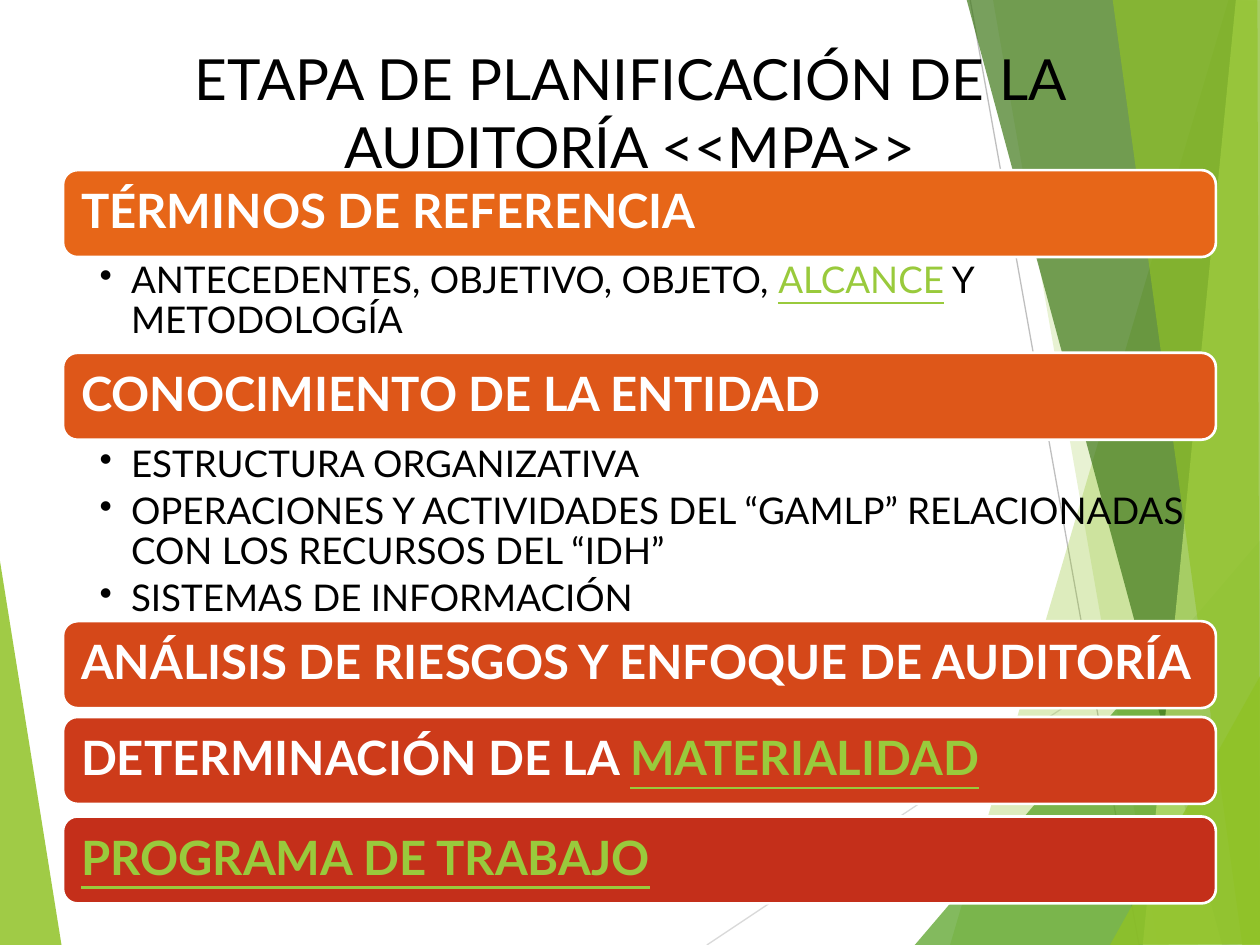
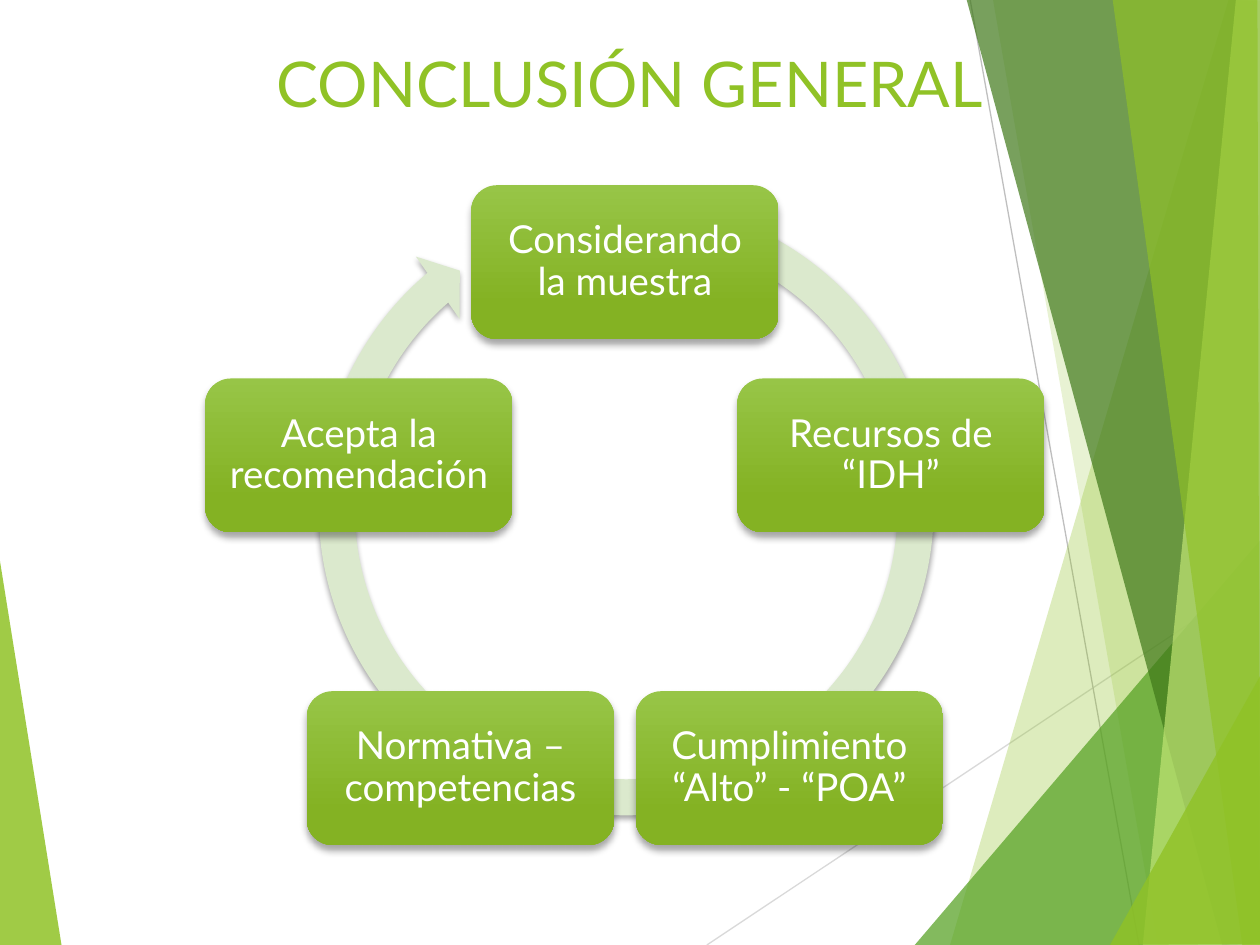
from dataclasses import dataclass
from math import cos, radians, sin

from lxml.etree import SubElement
from pptx import Presentation
from pptx.dml.color import RGBColor
from pptx.enum.shapes import MSO_CONNECTOR, MSO_SHAPE
from pptx.enum.text import MSO_ANCHOR, PP_ALIGN
from pptx.oxml.ns import qn
from pptx.util import Inches, Pt


@dataclass(frozen=True)
class Theme:
    font: str = "Lato"
    black: str = "000000"
    white: str = "FFFFFF"
    green: str = "90C226"
    forest: str = "54A021"
    dark_green: str = "3F7819"
    lime: str = "C0E474"
    link: str = "99CA3C"
    ring: str = "DBE9CD"
    node_top: str = "97C547"
    node_bottom: str = "84B223"
    light_gray: str = "D9D9D9"
    gray: str = "BFBFBF"
    bars: tuple = ("E76618", "DE5719", "D54819", "CD3B1A", "C42F1A")
    long_title_size: float = 32.4
    title_size: float = 36
    bar_size: float = 27
    bullet_size: float = 21
    node_size: float = 22


THEME = Theme()

LEFT_FACET = (THEME.green, 85, [(-0.01, 4.39), (0.49, 7.51), (-0.01, 7.5)])
RIGHT_FACETS = [
    (THEME.green, 30, [(9.75, 0), (7.54, 7.5), (10.02, 7.51), (10.01, 0.01)]),
    (THEME.green, 20, [(7.88, -0.01), (9.19, 7.5), (10.01, 7.5), (10.01, -0.01)]),
    (THEME.forest, 72, [(7.26, 7.5), (10, 4.29), (10.01, 7.5)]),
    (THEME.dark_green, 70, [(7.67, -0.01), (9.7, 7.5), (10.01, 7.49), (10.01, -0.01)]),
    (THEME.lime, 70, [(9.81, -0.01), (9.07, 7.5), (10.01, 7.5), (10, -0.01)]),
    (THEME.green, 65, [(8.83, -0.01), (9.86, 7.5), (10, 7.5), (9.98, -0.01)]),
    (THEME.green, 80, [(8.81, 7.5), (10.01, 5.35), (10.01, 7.49)]),
]
FACET_LINES = [
    (THEME.light_gray, (5.61, 7.5), (10.01, 4.57)),
    (THEME.gray, (7.7, 0), (9.04, 7.5)),
]

STAGES = [
    (1.35, [("TÉRMINOS DE REFERENCIA", False)]),
    (2.8, [("CONOCIMIENTO DE LA ENTIDAD", False)]),
    (4.93, [("ANÁLISIS DE RIESGOS Y ENFOQUE DE AUDITORÍA", False)]),
    (5.69, [("DETERMINACIÓN DE LA ", False), ("MATERIALIDAD", True)]),
    (6.48, [("PROGRAMA DE TRABAJO", True)]),
]
STAGE_DETAILS = [
    (2.04, 0.76, [
        [("ANTECEDENTES, OBJETIVO, OBJETO, ", False), ("ALCANCE", True),
         (" Y METODOLOGÍA", False)],
    ]),
    (3.5, 1.44, [
        [("ESTRUCTURA ORGANIZATIVA", False)],
        [("OPERACIONES Y ACTIVIDADES DEL “GAMLP” RELACIONADAS "
          "CON LOS RECURSOS DEL “IDH”", False)],
        [("SISTEMAS DE INFORMACIÓN", False)],
    ]),
]
CYCLE_STEPS = [
    "Considerando la muestra",
    "Recursos de “IDH”",
    "Cumplimiento “Alto” - “POA”",
    "Normativa – competencias",
    "Acepta la recomendación",
]


def rgb(color):
    return RGBColor.from_string(color)


def box(*lengths):
    return [Inches(length) for length in lengths]


def add_bullet(paragraph):
    properties = paragraph._p.get_or_add_pPr()
    properties.set("marL", str(Inches(0.25)))
    properties.set("indent", str(-Inches(0.25)))
    SubElement(properties, qn("a:buChar")).set("char", "•")


def write_text(shape, paragraphs, *, size, color, bold=False, align=PP_ALIGN.LEFT,
               anchor=MSO_ANCHOR.TOP, insets=(0.1, 0.05, 0.1, 0.05),
               line_spacing=None, space_after=0, bullets=False):
    frame = shape.text_frame
    frame.word_wrap = True
    frame.vertical_anchor = anchor
    (frame.margin_left, frame.margin_top,
     frame.margin_right, frame.margin_bottom) = box(*insets)
    for index, runs in enumerate(paragraphs):
        paragraph = frame.add_paragraph() if index else frame.paragraphs[0]
        paragraph.alignment = align
        paragraph.line_spacing = line_spacing
        paragraph.space_after = Pt(space_after)
        if bullets:
            add_bullet(paragraph)
        for text, is_link in runs:
            run = paragraph.add_run()
            run.text = text
            run.font.name = THEME.font
            run.font.size = Pt(size)
            run.font.bold = bold
            run.font.underline = is_link
            run.font.color.rgb = rgb(THEME.link if is_link else color)


def add_shadow(shape, blur, distance):
    effects = shape._element.spPr.find(qn("a:effectLst"))
    shadow = SubElement(effects, qn("a:outerShdw"), blurRad=str(Pt(blur)),
                        dist=str(Pt(distance)), dir="5400000", rotWithShape="0")
    color = SubElement(shadow, qn("a:srgbClr"), val=THEME.black)
    SubElement(color, qn("a:alpha"), val="35000")


def add_plain_shape(slide, kind, *lengths, fill=None):
    shape = slide.shapes.add_shape(kind, *box(*lengths))
    shape.shadow.inherit = False
    shape.line.fill.background()
    if fill:
        shape.fill.solid()
        shape.fill.fore_color.rgb = rgb(fill)
    return shape


def add_facet(slide, color, opacity, points):
    corners = [box(*point) for point in points]
    builder = slide.shapes.build_freeform(*corners[0])
    builder.add_line_segments(corners[1:], close=True)
    facet = builder.convert_to_shape()
    facet.shadow.inherit = False
    facet.line.fill.background()
    facet.fill.solid()
    facet.fill.fore_color.rgb = rgb(color)
    fill_color = facet._element.spPr.find(qn("a:solidFill")).find(qn("a:srgbClr"))
    SubElement(fill_color, qn("a:alpha"), val=str(opacity * 1000))


def add_facet_line(slide, color, start, end):
    line = slide.shapes.add_connector(MSO_CONNECTOR.STRAIGHT, *box(*start, *end))
    line.line.color.rgb = rgb(color)
    line.line.width = Pt(0.75)
    SubElement(line._element.spPr, qn("a:effectLst"))


def add_background(slide):
    add_facet(slide, *LEFT_FACET)
    for line in FACET_LINES:
        add_facet_line(slide, *line)
    for facet in RIGHT_FACETS:
        add_facet(slide, *facet)


def add_title(slide, text, height, size, color):
    title = slide.shapes.add_textbox(*box(0.5, 0.3, 9, height))
    write_text(title, [[(text, False)]], size=size, color=color, align=PP_ALIGN.CENTER)


def add_stage_bar(slide, top, runs, fill):
    bar = add_plain_shape(slide, MSO_SHAPE.ROUNDED_RECTANGLE, 0.5, top, 9.15, 0.69, fill=fill)
    bar.line.color.rgb = rgb(THEME.white)
    bar.line.width = Pt(1.5)
    write_text(bar, [runs], size=THEME.bar_size, color=THEME.white, bold=True,
               anchor=MSO_ANCHOR.MIDDLE, insets=(0.11,) * 4, line_spacing=0.9)


def add_stage_details(slide, top, height, items):
    details = slide.shapes.add_textbox(*box(0.5, top, 9.15, height))
    write_text(details, items, size=THEME.bullet_size, color=THEME.black,
               insets=(0.29, 0.04, 0.21, 0.04), line_spacing=0.9,
               space_after=4.2, bullets=True)


def add_cycle_ring(slide):
    ring = add_plain_shape(slide, MSO_SHAPE.CIRCULAR_ARROW, 2.37, 1.43, 5.2, 5.2,
                           fill=THEME.ring)
    for index, value in enumerate((0.055, 3.307, 137.654, 173.924, 0.058)):
        ring.adjustments[index] = value
    add_shadow(ring, 3, 2)


def add_cycle_node(slide, center_x, center_y, text):
    width, height = 2.44, 1.22
    node = add_plain_shape(slide, MSO_SHAPE.ROUNDED_RECTANGLE, center_x - width / 2,
                           center_y - height / 2, width, height)
    node.fill.gradient()
    node.fill.gradient_angle = 270
    stops = [(0, THEME.node_top), (0.78, THEME.node_bottom)]
    for stop, (position, color) in zip(node.fill.gradient_stops, stops):
        stop.position = position
        stop.color.rgb = rgb(color)
    add_shadow(node, 4, 3)
    write_text(node, [[(text, False)]], size=THEME.node_size, color=THEME.white,
               align=PP_ALIGN.CENTER, anchor=MSO_ANCHOR.MIDDLE,
               insets=(0.09,) * 4, line_spacing=0.9)


def add_cycle(slide):
    center_x, center_y, radius = 4.96, 4.3, 2.22
    add_cycle_ring(slide)
    for index, text in enumerate(CYCLE_STEPS):
        angle = radians(index * 360 / len(CYCLE_STEPS))
        add_cycle_node(slide, center_x + radius * sin(angle),
                       center_y - radius * cos(angle), text)


def add_slide(presentation):
    slide = presentation.slides.add_slide(presentation.slide_layouts[6])
    add_background(slide)
    return slide


def add_planning_slide(presentation):
    slide = add_slide(presentation)
    add_title(slide, "ETAPA DE PLANIFICACIÓN DE LA AUDITORÍA <<MPA>>", 0.93,
              THEME.long_title_size, THEME.black)
    for (top, runs), fill in zip(STAGES, THEME.bars):
        add_stage_bar(slide, top, runs, fill)
    for details in STAGE_DETAILS:
        add_stage_details(slide, *details)


def add_conclusion_slide(presentation):
    slide = add_slide(presentation)
    add_title(slide, "CONCLUSIÓN GENERAL", 0.85, THEME.title_size, THEME.green)
    add_cycle(slide)


def main():
    presentation = Presentation()
    presentation.slide_width = Inches(10)
    presentation.slide_height = Inches(7.5)
    add_planning_slide(presentation)
    add_conclusion_slide(presentation)
    presentation.save("out.pptx")


if __name__ == "__main__":
    main()
